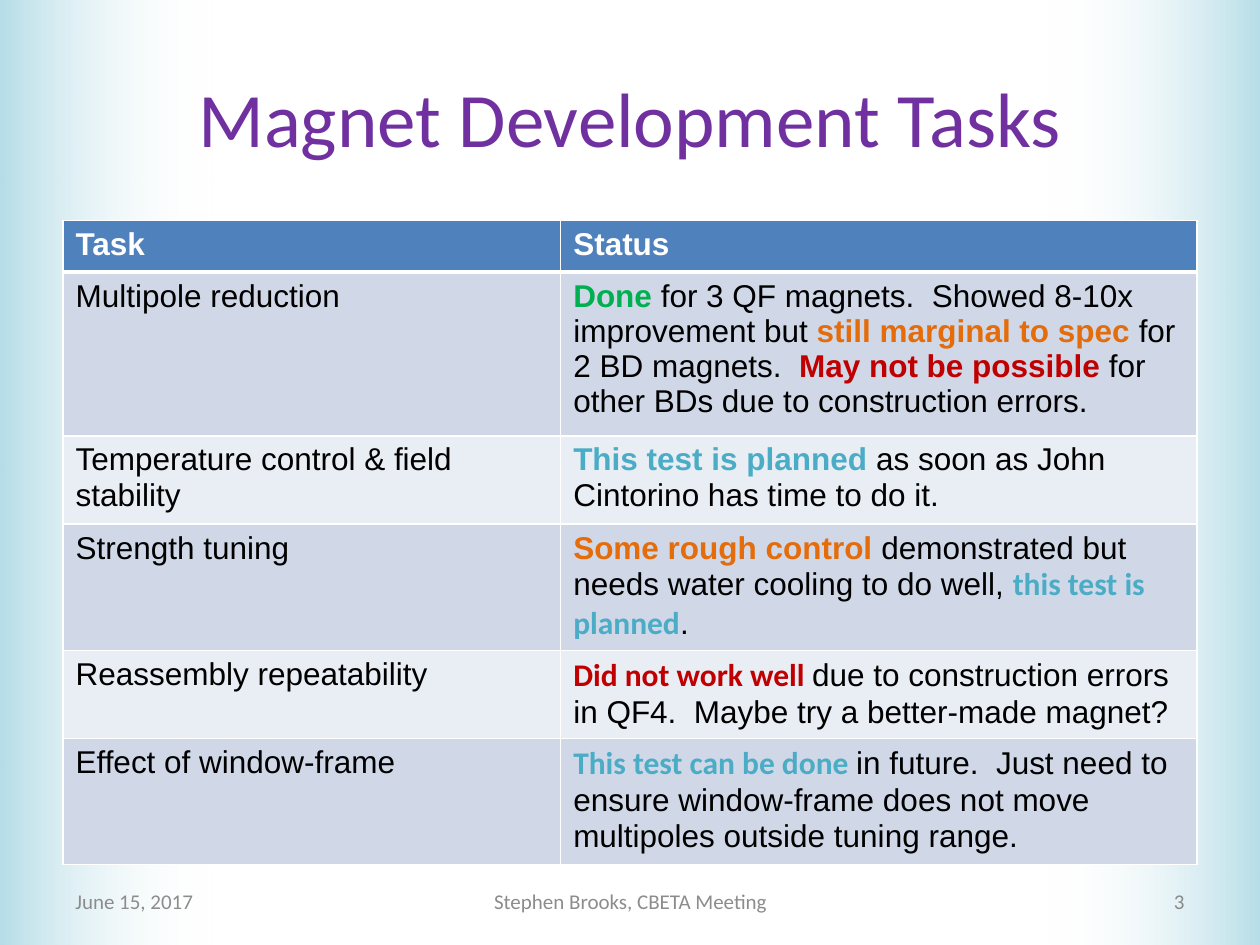
from lxml import etree
from pptx import Presentation
from pptx.dml.color import RGBColor
from pptx.enum.shapes import MSO_SHAPE
from pptx.enum.text import MSO_ANCHOR, PP_ALIGN
from pptx.oxml.ns import qn
from pptx.util import Inches, Pt

COLORS = {
    "white": "FFFFFF", "black": "000000", "edge": "B7DEE8", "title": "7030A0",
    "header": "4F81BD", "band_dark": "D0D8E8", "band_light": "E9EDF4",
    "done": "00B050", "marginal": "E46C0A", "failed": "C00000",
    "planned": "4BACC6", "footer": "8C8C8C", "number": "898989",
}


def rgb(name):
    return RGBColor.from_string(COLORS[name])


def add_text(left, top, width, height, text, size, color, align):
    box = slide.shapes.add_textbox(Inches(left), Inches(top), Inches(width), Inches(height))
    frame = box.text_frame
    frame.word_wrap = True
    frame.vertical_anchor = MSO_ANCHOR.MIDDLE
    paragraph = frame.paragraphs[0]
    paragraph.text = text
    paragraph.alignment = align
    paragraph.font.size = Pt(size)
    paragraph.font.name = "Calibri"
    paragraph.font.color.rgb = rgb(color)


presentation = Presentation()
presentation.slide_width, presentation.slide_height = Inches(10), Inches(7.5)
slide = presentation.slides.add_slide(presentation.slide_layouts[6])
slide.background.fill.solid()
slide.background.fill.fore_color.rgb = rgb("white")

# Side bands fading towards the middle
for left, rotation in [(8.31, 180), (0, 0)]:
    band = slide.shapes.add_shape(
        MSO_SHAPE.RECTANGLE, Inches(left), 0, Inches(1.69), Inches(7.5))
    band.rotation = rotation
    band.shadow.inherit = False
    band.line.fill.background()
    band.fill.gradient()
    band.fill.gradient_angle = 0
    for stop, color in zip(band.fill.gradient_stops, ["edge", "white"]):
        stop.color.rgb = rgb(color)
    clear_color = list(band.element.spPr.iter(qn("a:srgbClr")))[-1]
    etree.SubElement(clear_color, qn("a:alpha"), val="0")

# Title
add_text(0.5, 0.3, 9, 1.25, "Magnet Development Tasks", 44, "title", PP_ALIGN.CENTER)

# Task table: each status is a list of runs (text, highlight colour, font)
tasks = [
    ("Multipole reduction", [
        ("Done", "done", "Arial"),
        (" for 3 QF magnets.  Showed 8-10x improvement but ", None, "Arial"),
        ("still marginal to spec", "marginal", "Arial"),
        (" for 2 BD magnets.  ", None, "Arial"),
        ("May not be possible", "failed", "Arial"),
        (" for other BDs due to construction errors.", None, "Arial")]),
    ("Temperature control & field stability", [
        ("This test is planned", "planned", "Arial"),
        (" as soon as John Cintorino has time to do it.", None, "Arial")]),
    ("Strength tuning", [
        ("Some rough control", "marginal", "Arial"),
        (" demonstrated but needs water cooling to do well, ", None, "Arial"),
        ("this test is planned", "planned", "Calibri"),
        (".", None, "Arial")]),
    ("Reassembly repeatability", [
        ("Did not work well ", "failed", "Calibri"),
        ("due to construction errors in QF4.  Maybe try a better-made magnet?",
         None, "Arial")]),
    ("Effect of window-frame", [
        ("This test can be done ", "planned", "Calibri"),
        ("in future.  Just need to ensure window-frame does not move "
         "multipoles outside tuning range.", None, "Arial")]),
]
rows = [[[("Task", "white", "Arial")], [("Status", "white", "Arial")]]]
rows += [[[(task, None, "Arial")], status] for task, status in tasks]

table_frame = slide.shapes.add_table(
    len(rows), 2, Inches(0.5), Inches(1.75), Inches(9), Inches(4.81))
table = table_frame.table
for column, width in zip(table.columns, [3.95, 5.05]):
    column.width = Inches(width)

for row_index, row in enumerate(rows):
    table.rows[row_index].height = Inches(0.41)
    fill = "header" if row_index == 0 else "band_dark" if row_index % 2 else "band_light"
    for column_index, runs in enumerate(row):
        cell = table.cell(row_index, column_index)
        paragraph = cell.text_frame.paragraphs[0]
        paragraph.font.size = Pt(18)
        for text, highlight, font in runs:
            run = paragraph.add_run()
            run.text = text
            run.font.size = Pt(18)
            run.font.name = font
            run.font.bold = highlight is not None
            run.font.color.rgb = rgb(highlight or "black")

        # White borders, thicker between header and body; they precede the fill
        properties = cell._tc.get_or_add_tcPr()
        for side in ["L", "R", "T", "B"]:
            thick = (row_index, side) in [(0, "B"), (1, "T")]
            border = etree.SubElement(
                properties, qn(f"a:ln{side}"), w=str(Pt(3 if thick else 1)))
            solid = etree.SubElement(border, qn("a:solidFill"))
            etree.SubElement(solid, qn("a:srgbClr"), val=COLORS["white"])
        cell.fill.solid()
        cell.fill.fore_color.rgb = rgb(fill)
table_frame.height = Inches(4.81)

# Footer
for left, width, text, color, align in [
    (0.5, 2.33, "June 15, 2017", "footer", PP_ALIGN.LEFT),
    (3.42, 3.17, "Stephen Brooks, CBETA Meeting", "footer", PP_ALIGN.CENTER),
    (7.17, 2.33, "3", "number", PP_ALIGN.RIGHT),
]:
    add_text(left, 6.95, width, 0.4, text, 12, color, align)

presentation.save("out.pptx")
